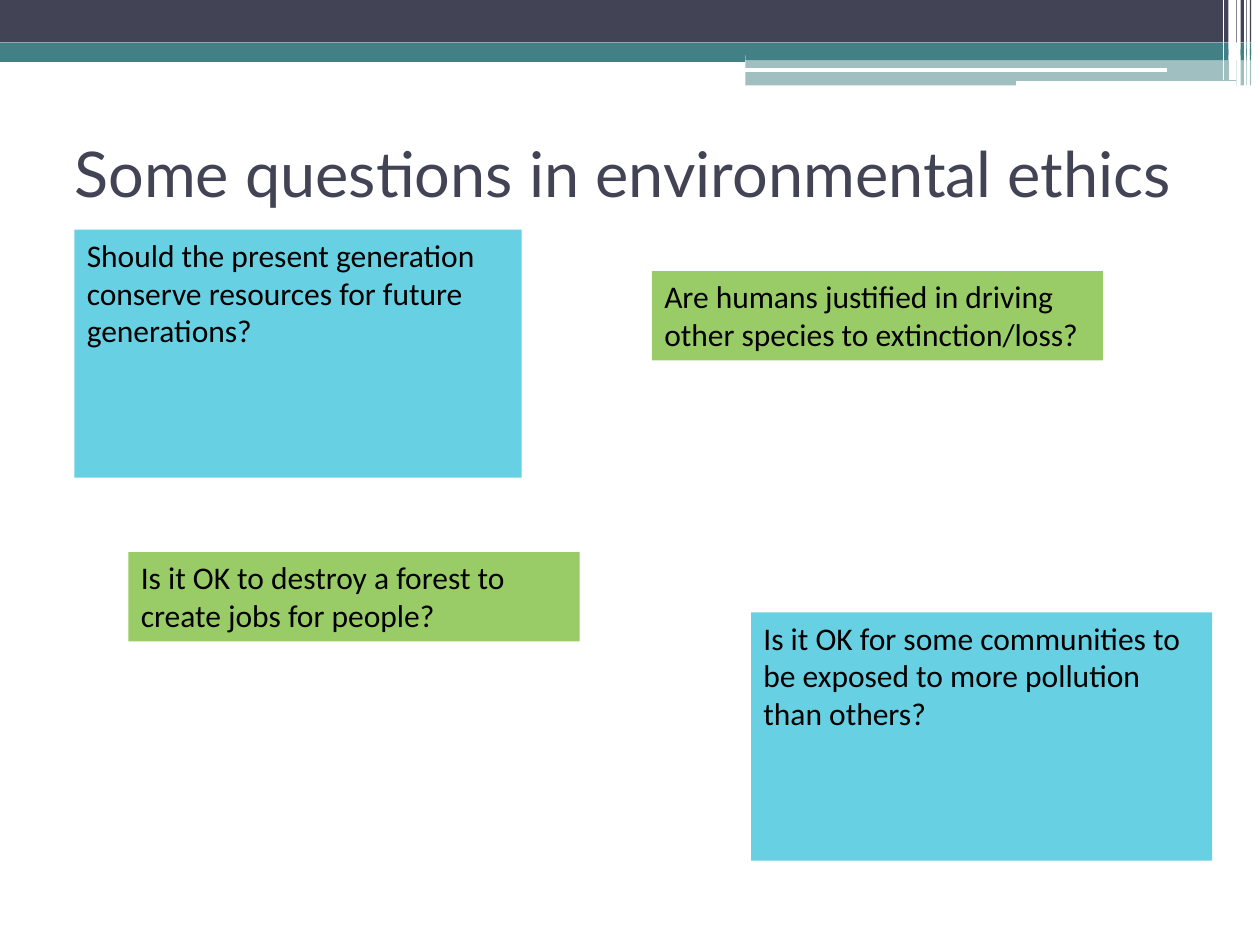
from lxml import etree
from pptx import Presentation
from pptx.dml.color import RGBColor
from pptx.enum import shapes, text
from pptx.oxml import ns
from pptx.util import Pt

NAVY, TEAL, WHITE, BLACK = "424455", "438085", "FFFFFF", "000000"
BLUE, GREEN = "68D0E3", "99CC67"


def color(value):
    return RGBColor.from_string(value)


class Deck:
    """Holds the type style and the slide being drawn; lengths are points."""

    def __init__(self, width, height):
        self.prs = Presentation()
        self.prs.slide_width, self.prs.slide_height = Pt(width), Pt(height)
        self.s = self.prs.slides.add_slide(self.prs.slide_layouts[6])
        self.title_style = ("Lato", 36, NAVY)
        self.body_style = ("Calibri", 18, BLACK)

    def bar(self, x, y, w, h, fill, alpha=100):
        sp = self.s.shapes.add_shape(
            shapes.MSO_SHAPE.RECTANGLE, Pt(x), Pt(y), Pt(w), Pt(h))
        sp.shadow.inherit = False
        sp.fill.solid()
        sp.fill.fore_color.rgb = color(fill)
        sp.line.fill.background()
        if alpha < 100:
            clr = sp._element.spPr.find(".//" + ns.qn("a:srgbClr"))
            etree.SubElement(clr, ns.qn("a:alpha"), val=str(alpha * 1000))
        return sp

    def line(self, x1, y1, x2, y2, stroke, weight):
        c = self.s.shapes.add_connector(
            shapes.MSO_CONNECTOR.STRAIGHT, Pt(x1), Pt(y1), Pt(x2), Pt(y2))
        c.line.color.rgb = color(stroke)
        c.line.width = Pt(weight)
        etree.SubElement(c._element.spPr, ns.qn("a:effectLst"))

    def add_words(self, tf, words, style):
        tf.word_wrap = True
        tf.vertical_anchor = text.MSO_ANCHOR.TOP
        p = tf.paragraphs[0]
        p.alignment = text.PP_ALIGN.LEFT
        r = p.add_run()
        r.text = words
        r.font.name, size, ink = style
        r.font.size = Pt(size)
        r.font.color.rgb = color(ink)

    def title(self, x, y, w, h, words):
        tf = self.s.shapes.add_textbox(Pt(x), Pt(y), Pt(w), Pt(h)).text_frame
        tf.margin_left = tf.margin_right = tf.margin_top = tf.margin_bottom = 0
        self.add_words(tf, words, self.title_style)

    def question(self, x, y, w, h, fill, words):
        sp = self.bar(x, y, w, h, fill)
        self.add_words(sp.text_frame, words, self.body_style)


def draw_header(deck):
    edge, middle = 702, 426
    strips = [(709, 3.4), (714.2, 0.8)]
    # top, height, colour, opacity, spans beside the two shared strips
    bands = [
        (0, 24.3, NAVY, 100, [(0, edge), (706.2, 0.5)]),
        (24.3, 7.4, TEAL, 100, [(0, edge)]),
        (28, 6.5, TEAL, 100, [(middle, edge - middle)]),
        (34.5, 14.4, TEAL, 50, [(middle, 280.5)]),
    ]
    deck.line(0, 33.3, middle, 33.3, TEAL, 4.08)
    for y, h, fill, alpha, spans in bands:
        for x, w in spans + strips:
            deck.bar(x, y, w, h, fill, alpha)
    for y, x1, x2, weight in [(40, 425.7, 666.8, 2.16), (47.8, 580.6, 706.5, 2.88)]:
        deck.line(x1, y, x2, y, WHITE, weight)
    for x, bottom, weight in [(711.5, 49, 0.72), (704.3, 46, 4.32), (699.3, 46, 0.72)]:
        deck.line(x, 0, x, bottom, WHITE, weight)


def main():
    deck = Deck(720, 540)
    draw_header(deck)
    deck.title(42.5, 77, 636, 107, "Some questions in environmental ethics")
    questions = [
        (42.5, 131.2, 255.6, 141.8, BLUE,
         "Should the present generation conserve resources for future generations?"),
        (73.4, 315.5, 257.8, 51, GREEN,
         "Is it OK to destroy a forest to create jobs for people?"),
        (429.2, 350, 263.5, 141.8, BLUE,
         "Is it OK for some communities to be exposed to more pollution than others?"),
        (372.5, 155, 257.8, 51, GREEN,
         "Are humans justified in driving other species to extinction/loss?"),
    ]
    for question in questions:
        deck.question(*question)
    deck.prs.save("out.pptx")


if __name__ == "__main__":
    main()
